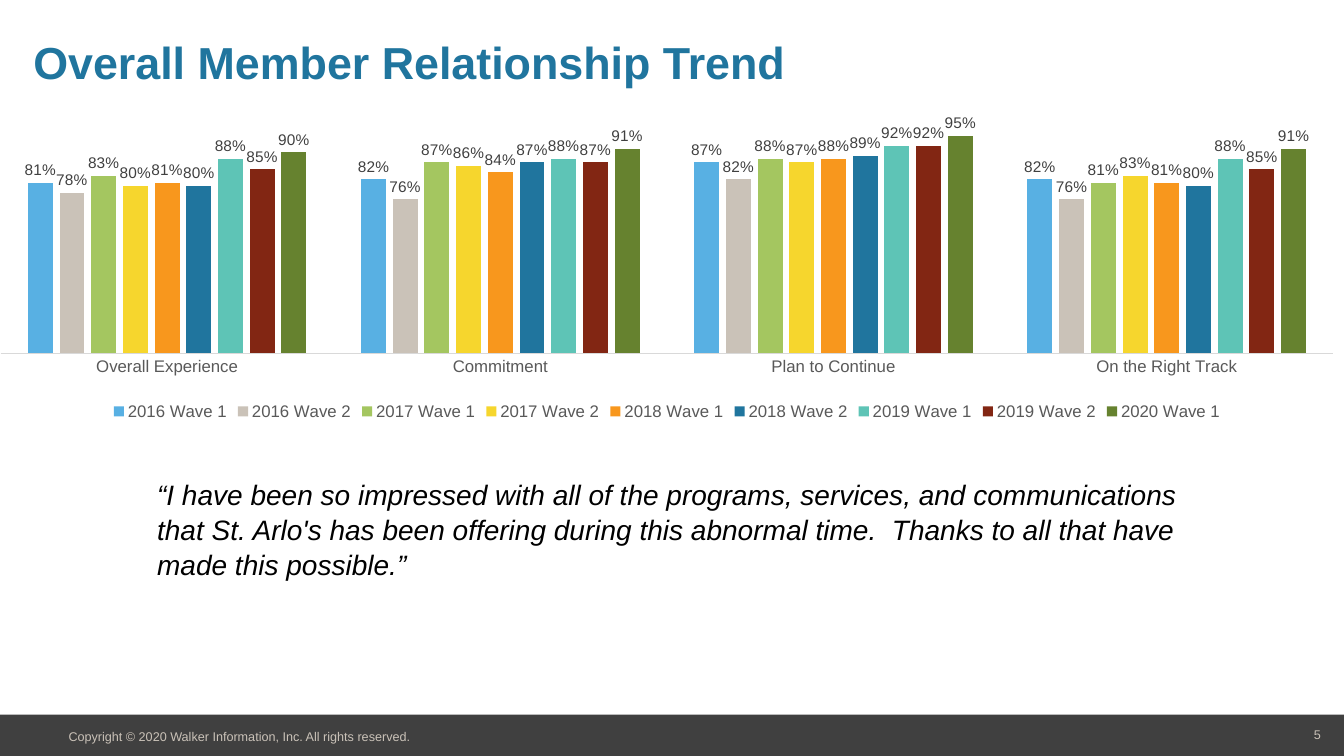
from pptx import Presentation
from pptx.chart.data import CategoryChartData
from pptx.dml.color import RGBColor
from pptx.enum.chart import XL_CHART_TYPE, XL_LABEL_POSITION, XL_LEGEND_POSITION, XL_TICK_MARK
from pptx.enum.shapes import MSO_SHAPE
from pptx.enum.text import MSO_ANCHOR, PP_ALIGN
from pptx.oxml import parse_xml
from pptx.oxml.ns import nsdecls
from pptx.util import Inches, Pt

THEME = {
    "title": {"size": 32, "color": "20759E", "bold": True, "italic": False},
    "quote": {"size": 20, "color": "000000", "italic": True},
    "footer": {"size": 9, "color": "CAC2B8"},
    "axis": {"size": 12, "color": "595959"},
    "label": {"size": 11, "color": "404040"},
    "font": "Arial",
    "band": "404040",
    "axis_line": "D9D9D9",
}

WAVES = [
    ("2016 Wave 1", "58B0E3", (0.81, 0.82, 0.87, 0.82)),
    ("2016 Wave 2", "CAC2B8", (0.78, 0.76, 0.82, 0.76)),
    ("2017 Wave 1", "A4C660", (0.83, 0.87, 0.88, 0.81)),
    ("2017 Wave 2", "F6D62D", (0.80, 0.86, 0.87, 0.83)),
    ("2018 Wave 1", "F8971D", (0.81, 0.84, 0.88, 0.81)),
    ("2018 Wave 2", "20759E", (0.80, 0.87, 0.89, 0.80)),
    ("2019 Wave 1", "5EC4B6", (0.88, 0.88, 0.92, 0.88)),
    ("2019 Wave 2", "822613", (0.85, 0.87, 0.92, 0.85)),
    ("2020 Wave 1", "66822F", (0.90, 0.91, 0.95, 0.91)),
]


def style_font(font, role):
    font.name = THEME["font"]
    for name, value in THEME[role].items():
        if name == "color":
            font.color.rgb = RGBColor.from_string(value)
        else:
            setattr(font, name, Pt(value) if name == "size" else value)


def write_text(box, text, role, margin, spacing, align=PP_ALIGN.LEFT):
    frame = box.text_frame
    frame.word_wrap = True
    frame.vertical_anchor = MSO_ANCHOR.TOP
    for side in ("left", "top", "right", "bottom"):
        if margin is not None:
            setattr(frame, f"margin_{side}", margin)
    para = frame.paragraphs[0]
    para.alignment = align
    para.line_spacing = spacing
    span = para.add_run()
    span.text = text
    style_font(span.font, role)


deck = Presentation()
deck.slide_width, deck.slide_height = Inches(13.33), Inches(7.5)
page = deck.slides.add_slide(deck.slide_layouts[5])

band = page.shapes.add_shape(MSO_SHAPE.RECTANGLE, 0, Inches(7.09), Inches(13.35), Inches(0.42))
band.shadow.inherit = False
band.fill.solid()
band.fill.fore_color.rgb = RGBColor.from_string(THEME["band"])
band.line.fill.background()

title = page.shapes.title
for name, value in {"left": 0.33, "top": 0.29, "width": 12.73, "height": 0.53}.items():
    setattr(title, name, Inches(value))
write_text(title, "Overall Member Relationship Trend", "title", 0, 1.1)

TEXTS = [
    ((12.42, 7.21, 0.68, 0.15), "5", "footer", 0, 1.0, PP_ALIGN.RIGHT),
    ((0.68, 7.23, 3.93, 0.15), "Copyright © 2020 Walker Information, Inc. All rights reserved.",
     "footer", 0, 1.0, PP_ALIGN.LEFT),
    ((1.46, 4.67, 10.38, 1.11),
     "“I have been so impressed with all of the programs, services, and communications "
     "that St. Arlo's has been offering during this abnormal time.  Thanks to all that "
     "have made this possible.”", "quote", None, 1.05, PP_ALIGN.LEFT),
]
for place, *content in TEXTS:
    box = page.shapes.add_textbox(*map(Inches, place))
    write_text(box, *content)

chart_data = CategoryChartData(number_format="0%")
chart_data.categories = ["Overall Experience", "Commitment", "Plan to Continue", "On the Right Track"]
for wave, color, shares in WAVES:
    chart_data.add_series(wave, shares)
chart = page.shapes.add_chart(
    XL_CHART_TYPE.COLUMN_CLUSTERED, 0, Inches(1.02), Inches(13.23), Inches(3.19), chart_data
).chart
style_font(chart.font, "axis")
chart.has_title = False
chart.has_legend = True
chart.legend.position = XL_LEGEND_POSITION.BOTTOM
chart.legend.include_in_layout = False
style_font(chart.legend.font, "axis")

value_axis = chart.value_axis
for name, value in {"minimum_scale": 0.3, "maximum_scale": 1.0,
                    "has_major_gridlines": False, "visible": False}.items():
    setattr(value_axis, name, value)

category_axis = chart.category_axis
category_axis.major_tick_mark = XL_TICK_MARK.NONE
category_axis.format.line.color.rgb = RGBColor.from_string(THEME["axis_line"])
category_axis.format.line.width = Pt(0.75)
style_font(category_axis.tick_labels.font, "axis")

plot = chart.plots[0]
for name, value in {"gap_width": 219, "overlap": -27, "vary_by_categories": False}.items():
    setattr(plot, name, value)
for series, (wave, color, shares) in zip(plot.series, WAVES):
    series.format.fill.solid()
    series.format.fill.fore_color.rgb = RGBColor.from_string(color)
    labels = series.data_labels
    for name, value in {"show_value": True, "number_format": "0%", "number_format_is_linked": False,
                        "position": XL_LABEL_POSITION.OUTSIDE_END}.items():
        setattr(labels, name, value)
    style_font(labels.font, "label")

plot_area = chart.element.find(".//{*}plotArea")
for layout in plot_area.findall("{*}layout"):
    plot_area.remove(layout)
plot_area.insert(0, parse_xml(
    f'<c:layout {nsdecls("c")}><c:manualLayout><c:layoutTarget val="inner"/>'
    '<c:xMode val="edge"/><c:yMode val="edge"/><c:x val="0"/><c:y val="0.05"/>'
    '<c:w val="1"/><c:h val="0.73"/></c:manualLayout></c:layout>'
))

deck.save("out.pptx")
